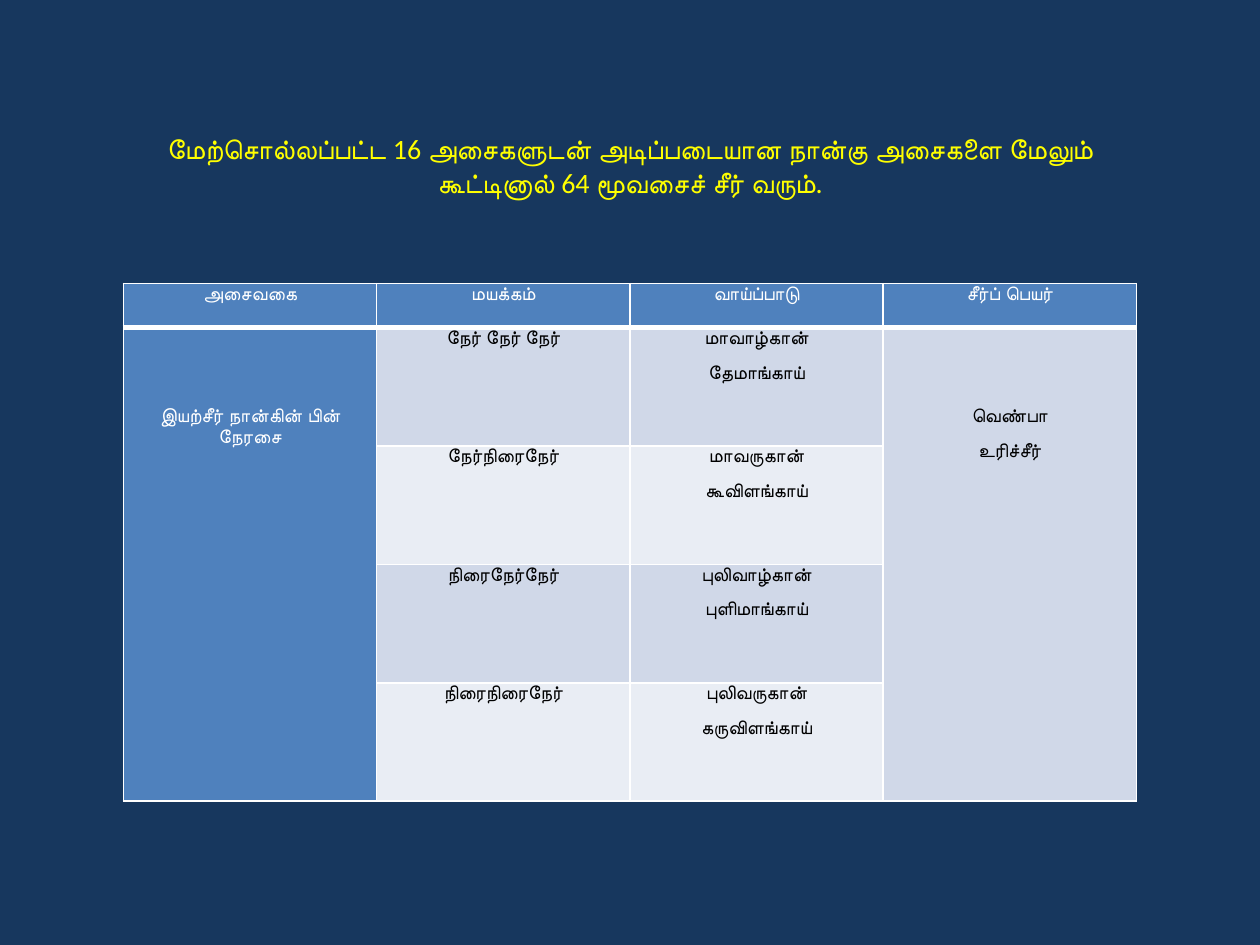
from dataclasses import dataclass

from lxml import etree
from pptx import Presentation
from pptx.dml.color import RGBColor
from pptx.enum import text
from pptx.oxml.ns import qn
from pptx.util import Inches, Pt

FONT = "Calibri"
COLORS = {
    "back": "17375E",
    "title": "FFFF00",
    "head": "4F81BD",
    "dark": "D0D8E8",
    "light": "E9EDF4",
    "white": "FFFFFF",
    "black": "000000",
}
TITLE = ("மேற்சொல்லப்பட்ட 16 அசைகளுடன் அடிப்படையான நான்கு அசைகளை "
         "மேலும் கூட்டினால் 64 மூவசைச் சீர் வரும்.")
HEADS = ["அசைவகை", "மயக்கம்", "வாய்ப்பாடு", "சீர்ப் பெயர்"]
GROUP = ["இயற்சீர் நான்கின் பின் நேரசை"]
NAME = ["வெண்பா", "உரிச்சீர்"]


@dataclass
class Foot:
    mix: str
    forms: list[str]


FEET = [
    Foot("நேர் நேர் நேர்", ["மாவாழ்கான்", "தேமாங்காய்"]),
    Foot("நேர்நிரைநேர்", ["மாவருகான்", "கூவிளங்காய்"]),
    Foot("நிரைநேர்நேர்", ["புலிவாழ்கான்", "புளிமாங்காய்"]),
    Foot("நிரைநிரைநேர்", ["புலிவருகான்", "கருவிளங்காய்"]),
]


def rgb(name: str) -> RGBColor:
    return RGBColor.from_string(COLORS[name])


def edge(cell, row: int) -> None:
    """Draw white cell borders, thick between the header and the body."""
    props = cell._tc.get_or_add_tcPr()
    thick = {("lnB", 0), ("lnT", 1)}
    for side in ("lnL", "lnR", "lnT", "lnB"):
        width = Pt(3 if (side, row) in thick else 1)
        line = etree.SubElement(props, qn(f"a:{side}"), w=str(width))
        fill = etree.SubElement(line, qn("a:solidFill"))
        etree.SubElement(fill, qn("a:srgbClr"), val=COLORS["white"])


def paint(cell, row: int, fill: str) -> None:
    edge(cell, row)
    cell.fill.solid()
    cell.fill.fore_color.rgb = rgb(fill)
    cell.margin_left = cell.margin_right = Inches(0.07)
    cell.margin_top = cell.margin_bottom = 0


def write(cell, lines: list[str], ink: str = "black", after: int = 8) -> None:
    frame = cell.text_frame
    frame.text = "\n".join(lines)
    for para in frame.paragraphs:
        para.alignment = text.PP_ALIGN.CENTER
        para.line_spacing = 1.07
        para.space_after = Pt(after)
        para.font.name = FONT
        para.font.size = Pt(11)
        para.font.bold = ink == "white"
        para.font.color.rgb = rgb(ink)


def add_title(slide) -> None:
    title = slide.shapes.title
    title.left, title.top = Inches(0.75), Inches(0.68)
    title.width, title.height = Inches(8.5), Inches(1.26)
    frame = title.text_frame
    frame.text = TITLE
    frame.auto_size = text.MSO_AUTO_SIZE.NONE
    frame.vertical_anchor = text.MSO_ANCHOR.MIDDLE
    para = frame.paragraphs[0]
    para.alignment = text.PP_ALIGN.CENTER
    para.font.name = FONT
    para.font.size = Pt(16)
    para.font.color.rgb = rgb("title")


def add_feet(slide) -> None:
    last = len(FEET)
    grid = slide.shapes.add_table(
        last + 1, len(HEADS), Inches(0.98), Inches(2.25), Inches(8.03), Inches(4.09)
    ).table
    grid.first_col = True
    for col in grid.columns:
        col.width = Inches(2.01)
    for row, line in enumerate(grid.rows):
        line.height = Inches(0.94 if row else 0.35)

    for col, head in enumerate(HEADS):
        paint(grid.cell(0, col), 0, "head")
        write(grid.cell(0, col), [head], "white", after=0)
    for row, foot in enumerate(FEET, 1):
        band = "dark" if row % 2 else "light"
        for col, fill in enumerate(["head", band, band, "dark"]):
            paint(grid.cell(row, col), row, fill)
        write(grid.cell(row, 1), [foot.mix])
        write(grid.cell(row, 2), foot.forms)

    for col, lines, ink in [(0, GROUP, "white"), (3, NAME, "black")]:
        cell = grid.cell(1, col)
        cell.merge(grid.cell(last, col))
        cell.margin_top = Inches(0.62)
        write(cell, lines, ink)


def main() -> None:
    deck = Presentation()
    deck.slide_width, deck.slide_height = Inches(10), Inches(7.5)
    slide = deck.slides.add_slide(deck.slide_layouts[5])
    slide.background.fill.solid()
    slide.background.fill.fore_color.rgb = rgb("back")
    add_title(slide)
    add_feet(slide)
    deck.save("out.pptx")


if __name__ == "__main__":
    main()
